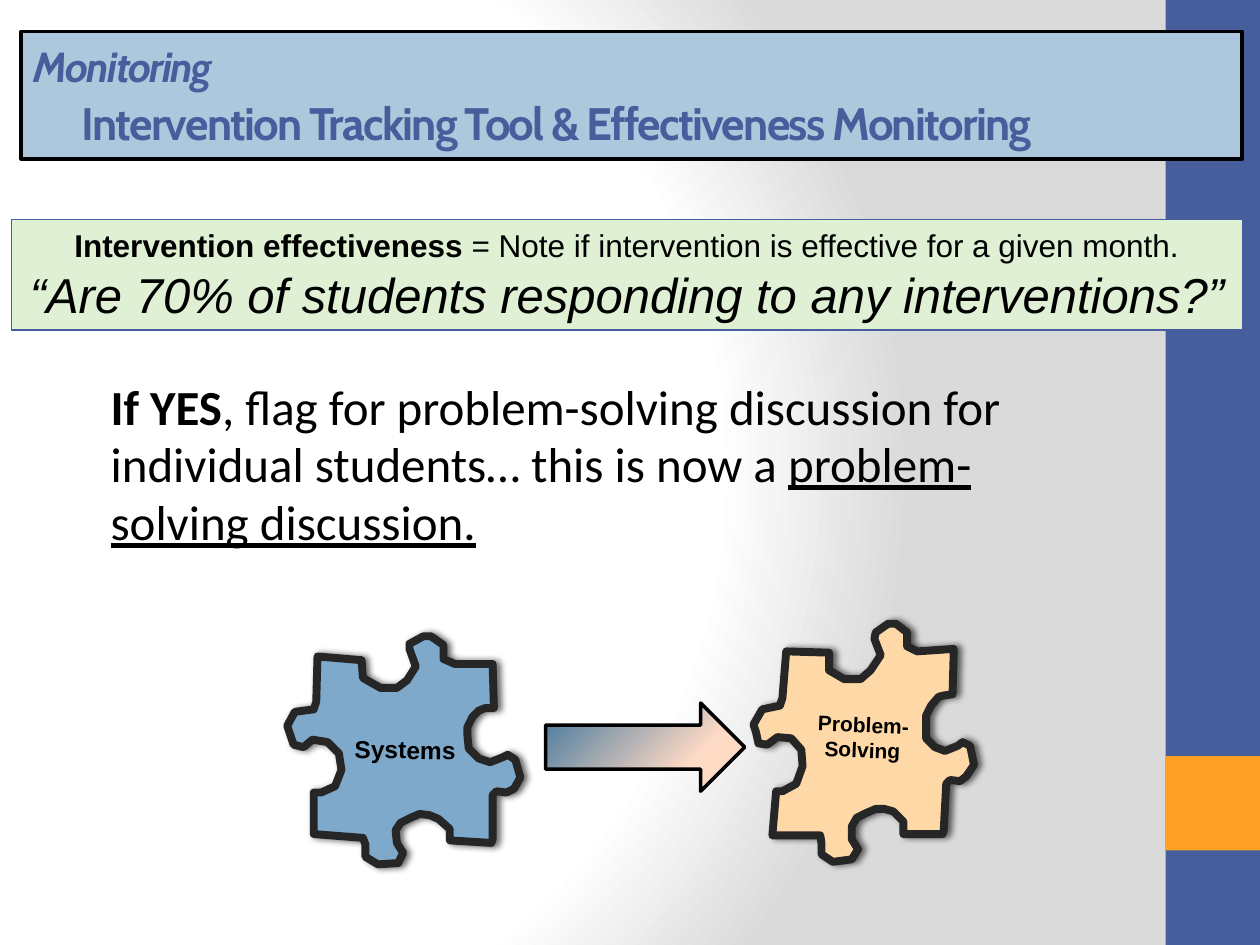
from pptx import Presentation
from pptx.dml.color import RGBColor
from pptx.enum.shapes import MSO_SHAPE
from pptx.enum.text import MSO_ANCHOR, PP_ALIGN
from pptx.oxml.ns import qn
from pptx.oxml.xmlchemy import OxmlElement
from pptx.util import Inches, Pt

RECT, ARROW = MSO_SHAPE.RECTANGLE, MSO_SHAPE.RIGHT_ARROW
LEFT, CENTER = PP_ALIGN.LEFT, PP_ALIGN.CENTER
MIDDLE = MSO_ANCHOR.MIDDLE
BLUE, BLACK = "465E9C", "000000"

# Outlines of the puzzle pieces, in hundredths of an inch
SOLVING_PIECE = [
    (757, 515), (756, 551), (749, 552), (745, 553), (739, 560), (735, 568),
    (735, 575), (735, 586), (742, 593), (750, 596), (760, 592), (764, 589),
    (770, 592), (773, 607), (767, 616), (762, 620), (754, 619), (751, 622),
    (749, 659), (748, 662), (717, 662), (717, 652), (709, 644), (702, 642),
    (695, 642), (688, 645), (680, 649), (676, 656), (676, 666), (681, 674),
    (676, 682), (661, 684), (652, 678), (652, 669), (651, 663), (613, 663),
    (616, 628), (621, 628), (632, 622), (637, 608), (636, 595), (628, 586),
    (617, 585), (609, 591), (602, 590), (600, 581), (598, 575), (605, 563),
    (619, 560), (621, 554), (624, 517), (658, 518), (658, 532), (670, 539),
    (683, 539), (691, 532), (699, 520), (694, 507), (695, 502), (705, 495),
    (711, 495), (720, 502), (720, 513), (728, 517)]
SYSTEMS_PIECE = [
    (391, 527), (392, 562), (385, 562), (380, 564), (375, 569), (371, 577),
    (371, 584), (372, 594), (380, 602), (389, 605), (399, 601), (403, 599),
    (409, 603), (413, 617), (408, 626), (402, 629), (394, 628), (391, 631),
    (391, 666), (390, 669), (357, 667), (357, 658), (348, 650), (341, 647),
    (333, 646), (326, 649), (318, 653), (314, 659), (315, 669), (320, 677),
    (316, 685), (300, 686), (290, 680), (290, 670), (288, 665), (249, 662),
    (249, 629), (255, 629), (266, 624), (271, 611), (269, 598), (260, 589),
    (248, 587), (241, 593), (233, 591), (230, 582), (228, 576), (234, 565),
    (249, 563), (251, 557), (252, 521), (287, 524), (288, 538), (302, 546),
    (315, 546), (323, 540), (330, 529), (325, 515), (325, 511), (336, 505),
    (342, 505), (352, 512), (352, 523), (361, 527)]


def rgb(color):
    return RGBColor.from_string(color)


def add_child(parent, tag, **attrs):
    child = OxmlElement(tag)
    for name, value in attrs.items():
        child.set(name, str(value))
    parent.append(child)
    return child


def paint(sp, fill, line=None, width=1):
    sp.shadow.inherit = False
    sp.fill.solid()
    sp.fill.fore_color.rgb = rgb(fill)
    if line:
        sp.line.color.rgb = rgb(line)
        sp.line.width = Pt(width)
    else:
        sp.line.fill.background()


def set_gradient(holder, stops, angle=None, focus=None):
    """Replace the solid fill in holder by a linear or circular gradient."""
    grad = OxmlElement("a:gradFill")
    stop_list = add_child(grad, "a:gsLst")
    for position, color in stops:
        stop = add_child(stop_list, "a:gs", pos=position * 1000)
        add_child(stop, "a:srgbClr", val=color)
    if focus:
        circle = add_child(grad, "a:path", path="circle")
        edges = {side: pct * 1000 for side, pct in zip("ltrb", focus)}
        add_child(circle, "a:fillToRect", **edges)
    else:
        add_child(grad, "a:lin", ang=angle * 60000, scaled=0)
    holder.replace(holder.find(qn("a:solidFill")), grad)


def add_box(s, shape, at, fill, line=None, width=1):
    sp = s.shapes.add_shape(shape, *map(Inches, at))
    paint(sp, fill, line, width)
    return sp


def add_label(s, at, rotation=0):
    sp = s.shapes.add_textbox(*map(Inches, at))
    sp.rotation = rotation
    return sp


def write(sp, paragraphs, font, color=BLACK, align=LEFT):
    """Each paragraph is a list of (text, font attributes)."""
    tf = sp.text_frame
    tf.word_wrap = True
    for i, runs in enumerate(paragraphs):
        p = tf.paragraphs[0] if i == 0 else tf.add_paragraph()
        p.alignment = align
        for text, attrs in runs:
            r = p.add_run()
            r.text = text
            r.font.name = font
            r.font.color.rgb = rgb(color)
            for name, value in attrs.items():
                setattr(r.font, name, value)
    return tf


def add_piece(s, points, fill):
    builder = s.shapes.build_freeform(*points[0], scale=Inches(0.01))
    builder.add_line_segments(points[1:], close=True)
    sp = builder.convert_to_shape()
    paint(sp, fill, "262626", 4.5)
    effects = sp._element.spPr.find(qn("a:effectLst"))
    shadow = add_child(effects, "a:outerShdw",
                       blurRad=Pt(4), dist=Pt(2), dir=0)
    add_child(add_child(shadow, "a:srgbClr", val=BLACK), "a:alpha", val=60000)


def add_title(s):
    sp = add_box(s, RECT, (0.17, 0.25, 9.69, 1.01), "ADC8DD", BLACK, 2.25)
    tf = write(sp, [
        [("Monitoring", {"size": Pt(24), "bold": True, "italic": True})],
        [("Intervention Tracking Tool & Effectiveness Monitoring",
          {"size": Pt(26), "bold": True})]], "Cabin", BLUE)
    tf.vertical_anchor = MIDDLE
    for p in tf.paragraphs:
        p.runs[0].font._element.set("spc", "-100")
    second = tf.paragraphs[1]
    second.space_before = Pt(2)
    second._p.get_or_add_pPr().set("marL", str(Inches(0.38)))


def add_question(s):
    sp = add_box(s, RECT, (0.09, 1.74, 9.77, 0.88), "DFF0D5", BLUE, 0.75)
    write(sp, [
        [("Intervention effectiveness", {"size": Pt(18), "bold": True}),
         (" = Note if intervention is effective for a given month.",
          {"size": Pt(18)})],
        [("“Are 70% of students responding to any interventions?”",
          {"size": Pt(28), "italic": True})]], "Arial", align=CENTER)


def add_answer(s):
    size = Pt(28)
    tf = write(add_label(s, (0.78, 2.96, 7.8, 1.6)), [
        [("If YES", {"size": size, "bold": True}),
         (", flag for problem-solving discussion for individual students… "
          "this is now a ", {"size": size}),
         ("problem-solving discussion.", {"size": size, "underline": True})],
    ], "Calibri")
    tf.paragraphs[0].line_spacing = 0.98


def main():
    prs = Presentation()
    prs.slide_width, prs.slide_height = Inches(10), Inches(7.5)
    s = prs.slides.add_slide(prs.slide_layouts[6])

    # Background and side band
    s.background.fill.solid()
    set_gradient(s._element.find(".//" + qn("p:bgPr")),
                 [(0, "FFFFFF"), (75, "FFFFFF"), (100, "DADADA")],
                 focus=(20, 50, 100, 50))
    add_box(s, RECT, (9.25, 0, 0.75, 7.5), BLUE)
    add_box(s, RECT, (9.25, 6, 0.75, 0.75), "FDA023")

    add_answer(s)

    # Puzzle pieces with their labels
    for points, fill, text, size, at, rotation in (
            (SOLVING_PIECE, "FED9A7", "Problem-Solving", 12,
             (6.35, 5.6, 1, 0.47), 2.3),
            (SYSTEMS_PIECE, "7EA9CA", "Systems", 14,
             (2.67, 5.78, 1.09, 0.34), 0.8)):
        add_piece(s, points, fill)
        write(add_label(s, at, rotation),
              [[(text, {"size": Pt(size), "bold": True})]],
              "Arial", align=CENTER)

    # Arrow from systems to problem-solving
    arrow = add_box(s, ARROW, (4.33, 5.58, 1.58, 0.7), "40749B", BLACK, 2)
    set_gradient(arrow._element.spPr,
                 [(0, "40749B"), (72, "FFDBC5"), (95, "FEDBC6"),
                  (100, "FEDCCA")], angle=45)

    add_title(s)
    add_question(s)
    prs.save("out.pptx")


if __name__ == "__main__":
    main()
